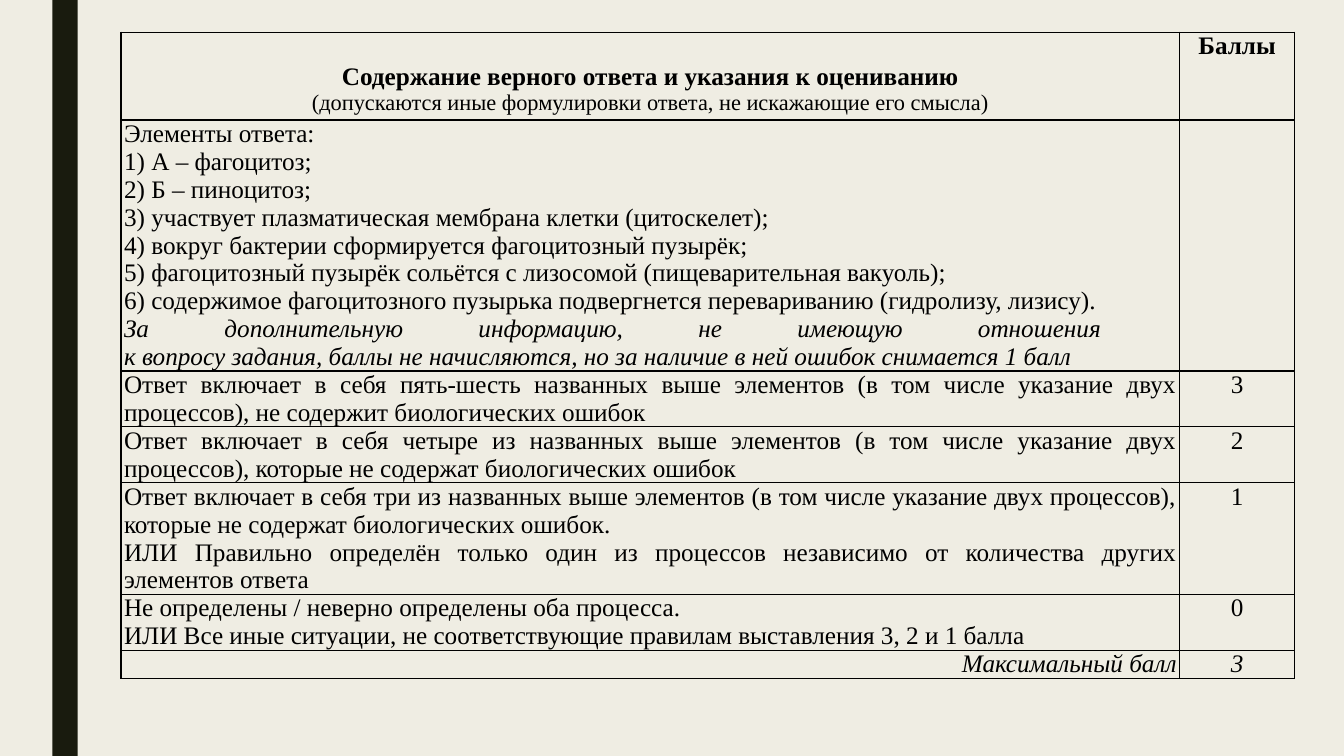
"""Build the slide with the answer key and scoring table."""
from pptx import Presentation
from pptx.dml.color import RGBColor
from pptx.enum.shapes import MSO_SHAPE
from pptx.enum.text import PP_ALIGN as ALIGN
from pptx.oxml import parse_xml
from pptx.oxml.ns import nsdecls
from pptx.util import Inches, Pt

BACKGROUND = RGBColor(0xEF, 0xED, 0xE3)
STRIPE = RGBColor(0x19, 0x1B, 0x0E)
INK = RGBColor(0, 0, 0)

CRITERIA = [
    ("\vСодержание верного ответа и указания к оцениванию\n"
     "(допускаются иные формулировки ответа, не искажающие его смысла)", "Баллы"),
    ("Элементы ответа:\n"
     "1) А – фагоцитоз;\n"
     "2) Б – пиноцитоз;\n"
     "3) участвует плазматическая мембрана клетки (цитоскелет);\n"
     "4) вокруг бактерии сформируется фагоцитозный пузырёк;\n"
     "5) фагоцитозный пузырёк сольётся с лизосомой (пищеварительная вакуоль);\n"
     "6) содержимое фагоцитозного пузырька подвергнется перевариванию (гидролизу, лизису).\n"
     "За дополнительную информацию, не имеющую отношения \v"
     "к вопросу задания, баллы не начисляются, но за наличие в ней ошибок снимается 1 балл", ""),
    ("Ответ включает в себя пять-шесть названных выше элементов (в том числе указание "
     "двух процессов), не содержит биологических ошибок", "3"),
    ("Ответ включает в себя четыре из названных выше элементов (в том числе указание "
     "двух процессов), которые не содержат биологических ошибок", "2"),
    ("Ответ включает в себя три из названных выше элементов (в том числе указание "
     "двух процессов), которые не содержат биологических ошибок.\n"
     "ИЛИ Правильно определён только один из процессов независимо от количества "
     "других элементов ответа", "1"),
    ("Не определены / неверно определены оба процесса.\n"
     "ИЛИ Все иные ситуации, не соответствующие правилам выставления 3, 2 и 1 балла", "0"),
    ("Максимальный балл", "3"),
]
COLUMN_WIDTHS = [10.5, 1.14]
ROW_HEIGHTS = [0.87, 2.31, 0.45, 0.45, 1.07, 0.49, 0.15]
LAST = len(CRITERIA) - 1

deck = Presentation()
deck.slide_width, deck.slide_height = Inches(13.33), Inches(7.5)
slide = deck.slides.add_slide(deck.slide_layouts[6])
slide.background.fill.solid()
slide.background.fill.fore_color.rgb = BACKGROUND

stripe = slide.shapes.add_shape(MSO_SHAPE.RECTANGLE, Inches(0.52), 0, Inches(0.25), deck.slide_height)
stripe.shadow.inherit = False
stripe.fill.solid()
stripe.fill.fore_color.rgb = STRIPE
stripe.line.fill.background()

scores = slide.shapes.add_table(
    len(CRITERIA), len(COLUMN_WIDTHS), Inches(1.2), Inches(0.32),
    Inches(sum(COLUMN_WIDTHS)), Inches(sum(ROW_HEIGHTS))).table
scores.first_row = scores.horz_banding = False
for column, width in zip(scores.columns, COLUMN_WIDTHS):
    column.width = Inches(width)
for row, height in zip(scores.rows, ROW_HEIGHTS):
    row.height = Inches(height)

for r, texts in enumerate(CRITERIA):
    for c, text in enumerate(texts):
        cell = scores.cell(r, c)
        cell.margin_left = cell.margin_right = Inches(0.03)
        cell.margin_top = cell.margin_bottom = 0
        for side in "LRTB":
            cell._tc.get_or_add_tcPr().append(parse_xml(
                f'<a:ln{side} {nsdecls("a")} w="{Pt(1)}"><a:solidFill>'
                f'<a:srgbClr val="{INK}"/></a:solidFill></a:ln{side}>'))
        cell.fill.background()
        cell.text_frame.text = text
        for paragraph in cell.text_frame.paragraphs:
            if c == 1 or r == 0:
                paragraph.alignment = ALIGN.CENTER
            else:
                paragraph.alignment = ALIGN.RIGHT if r == LAST else ALIGN.JUSTIFY
            is_hint = paragraph.text.startswith("(")
            is_note = paragraph.text.startswith("За ")
            for run in paragraph.runs:
                run.font.name = "Times New Roman"
                run.font.size = Pt(16 if is_hint else 18)
                run.font.color.rgb = INK
                run.font.bold = r == 0 and not is_hint
                run.font.italic = r == LAST or is_note

deck.save("out.pptx")
